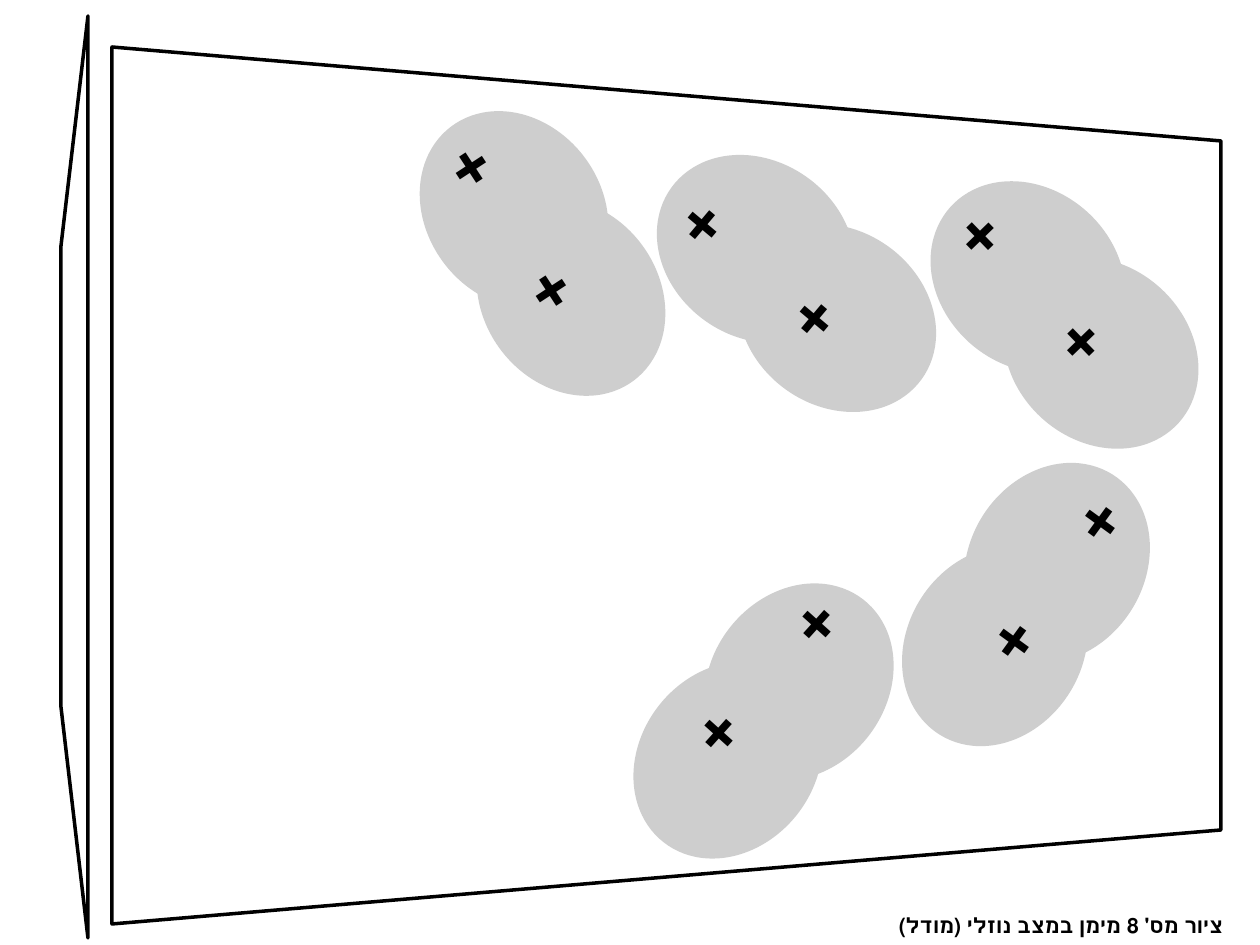
from pptx import Presentation
from pptx.dml.color import RGBColor
from pptx.enum.shapes import MSO_SHAPE
from pptx.enum.text import MSO_ANCHOR, MSO_AUTO_SIZE, PP_ALIGN
from pptx.util import Pt

PX = 914400 / 126
FONT = "Times New Roman"
COLORS = {"ink": "000000", "cloud": "CECECE"}


def emu(*vals):
    return [round(v * PX) for v in vals]


def write(par, text, size):
    par._p.get_or_add_pPr().set("rtl", "1")
    run = par.add_run()
    run.text = text
    run.font.name = FONT
    run.font.size = Pt(size)
    run.font.bold = True
    run.font.color.rgb = RGBColor.from_string(COLORS["ink"])
    return run


deck = Presentation()
deck.slide_width, deck.slide_height = emu(1260, 945)
slide = deck.slides.add_slide(deck.slide_layouts[5])
shapes = slide.shapes

# Caption
title = shapes.title
title.left, title.top, title.width, title.height = emu(740, 906, 496, 38)
frame = title.text_frame
frame.word_wrap = True
frame.auto_size = MSO_AUTO_SIZE.NONE
frame.vertical_anchor = MSO_ANCHOR.MIDDLE
par = frame.paragraphs[0]
par.alignment = PP_ALIGN.RIGHT
write(par, "ציור מס' 8 מימן במצב נוזלי (מודל)", 12)

# Front and side walls of the vessel
walls = [
    [(112, 47), (1221, 141), (1221, 830), (112, 924)],
    [(88, 16), (61, 246), (61, 707), (88, 938)],
]
for pts in walls:
    path = shapes.build_freeform(*pts[0], scale=PX)
    path.add_line_segments(pts[1:], close=True)
    wall = path.convert_to_shape()
    wall.shadow.inherit = False
    wall.fill.background()
    wall.line.color.rgb = RGBColor.from_string(COLORS["ink"])
    wall.line.width = Pt(2)

# Molecules: turn, centers of both clouds, center of the nuclei label
pairs = [
    (53, [(514, 210), (571, 297)], (522, 227)),
    (36, [(756, 249), (837, 318)], (768, 266)),
    (42, [(1028, 277), (1101, 353)], (1041, 285)),
    (302, [(995, 646), (1057, 563)], (1051, 573)),
    (128, [(799, 682), (728, 760)], (774, 689)),
]
WIDE, HIGH, TALL = 209, 176, 88
for turn, clouds, (x, y) in pairs:
    for cx, cy in clouds:
        cloud = shapes.add_shape(
            MSO_SHAPE.OVAL, *emu(cx - WIDE / 2, cy - HIGH / 2, WIDE, HIGH))
        cloud.rotation = turn
        cloud.shadow.inherit = False
        cloud.fill.solid()
        cloud.fill.fore_color.rgb = RGBColor.from_string(COLORS["cloud"])
        cloud.line.fill.background()

    label = shapes.add_textbox(*emu(x - WIDE / 2, y - TALL / 2, WIDE, TALL))
    label.rotation = turn + 4
    frame = label.text_frame
    frame.word_wrap = True
    frame.margin_left, frame.margin_right = emu(0, 7)
    frame.margin_top, frame.margin_bottom = emu(5, 0)
    par = frame.paragraphs[0]
    par.alignment = PP_ALIGN.CENTER
    write(par, "+", 37)
    gap = write(par, " ", 37)
    gap.font._element.set("spc", "5200")  # letter spacing parts the nuclei
    write(par, "+", 37)

deck.save("out.pptx")
